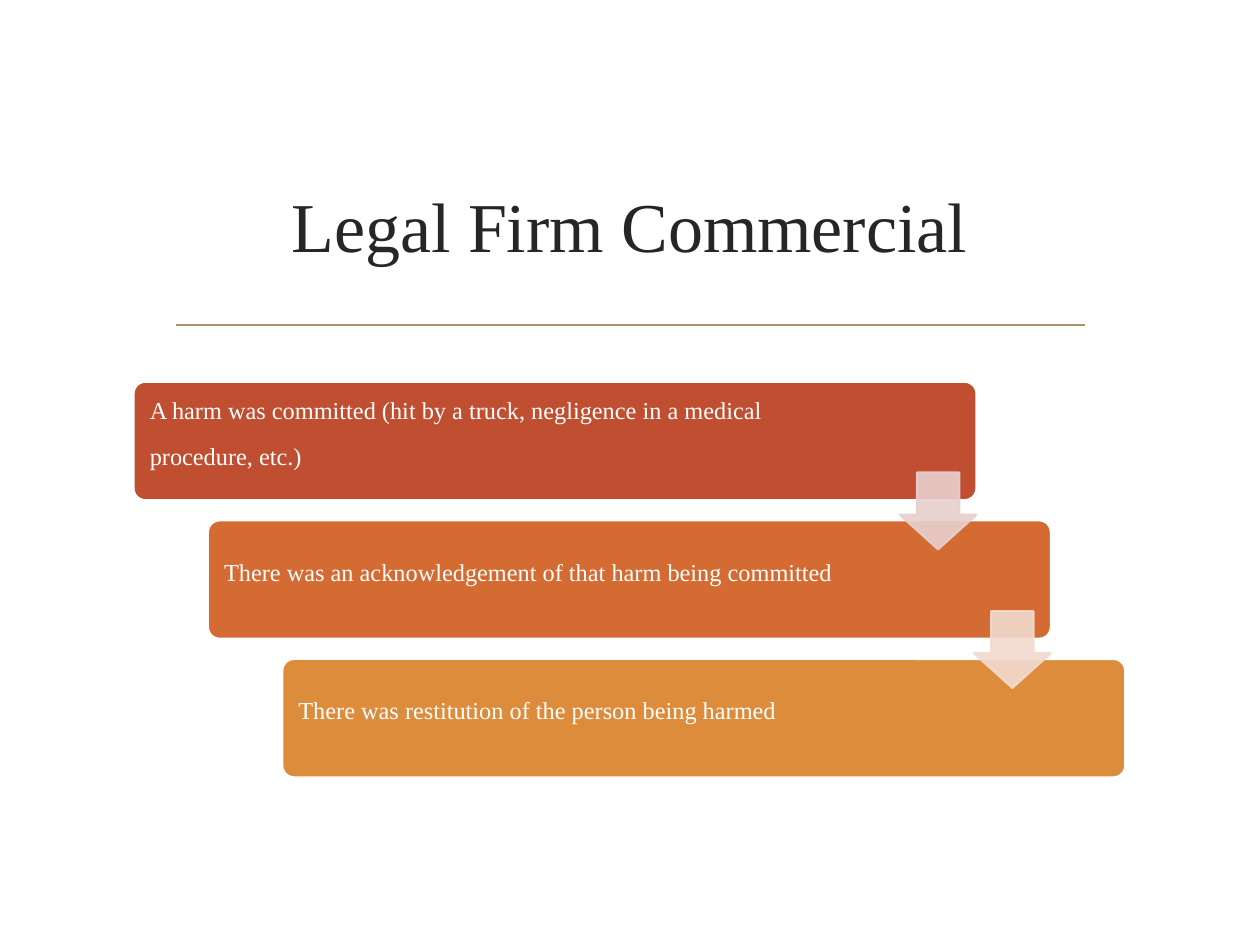
from lxml.etree import SubElement
from pptx import Presentation
from pptx.dml.color import RGBColor
from pptx.enum.shapes import MSO_CONNECTOR, MSO_SHAPE
from pptx.enum.text import MSO_ANCHOR, PP_ALIGN
from pptx.oxml.ns import qn
from pptx.util import Inches, Pt

# Content
TITLE = "Legal Firm Commercial"
STEPS = [  # wording, bar colour, text width
    ("A harm was committed (hit by a truck, negligence in a medical procedure, etc.)", "C04F32", 5.68),
    ("There was an acknowledgement of that harm being committed", "D36B33", 5.43),
    ("There was restitution of the person being harmed", "DD8C3C", 5.43),
]
ARROW_COLORS = ["E8D0CE", "F2DACE"]

# Layout in inches
SLIDE_W, SLIDE_H = 10, 7.5
LEFT, TOP = 1.06, 3.03
STEP_X, STEP_Y = 0.59, 1.1
BAR_W, BAR_H = 6.69, 0.94
TEXT_INSET = 0.03
ARROW_SIZE, ARROW_DROP = 0.61, 0.72
LINE_WIDTH = Pt(1.25)
TITLE_FORMAT = {"size": Pt(40), "name": "Times New Roman"}
STEP_FORMAT = {"size": Pt(24), "name": "Times New Roman"}


def rgb(color):
    return RGBColor.from_string(color)


def box(left, top, width, height):
    return [Inches(value) for value in (left, top, width, height)]


def add_text(slide, place, wording, color, formats, inset):
    frame = slide.shapes.add_textbox(*box(*place)).text_frame
    settings = {"word_wrap": True, "vertical_anchor": MSO_ANCHOR.MIDDLE}
    for side in ("left", "right", "top", "bottom"):
        settings[f"margin_{side}"] = Inches(inset)
    for name, value in settings.items():
        setattr(frame, name, value)
    paragraph = frame.paragraphs[0]
    run = paragraph.add_run()
    run.text = wording
    for name, value in formats.items():
        setattr(run.font, name, value)
    run.font.color.rgb = rgb(color)
    return paragraph, run


def add_block(slide, preset, place, adjustments, fill, line):
    block = slide.shapes.add_shape(preset, *box(*place))
    block.shadow.inherit = False
    for index, value in enumerate(adjustments):
        block.adjustments[index] = value
    block.fill.solid()
    block.fill.fore_color.rgb = rgb(fill)
    block.line.color.rgb = rgb(line)
    block.line.width = LINE_WIDTH
    return block


def main():
    deck = Presentation()
    deck.slide_width, deck.slide_height = Inches(SLIDE_W), Inches(SLIDE_H)
    slide = deck.slides.add_slide(deck.slide_layouts[6])

    # Divider and title
    divider = slide.shapes.add_connector(
        MSO_CONNECTOR.STRAIGHT, *box(1.4, 2.58, 8.61, 2.58))
    divider.line.color.rgb = rgb("AB946B")
    divider.line.width = LINE_WIDTH
    SubElement(divider._element.spPr, qn("a:effectLst"))
    heading, _ = add_text(slide, (LEFT, 1.07, 7.87, 1.43), TITLE, "262626", TITLE_FORMAT, 0.05)
    heading.alignment = PP_ALIGN.CENTER

    # Staircase of steps
    for row, (wording, color, text_width) in enumerate(STEPS):
        left, top = LEFT + row * STEP_X, TOP + row * STEP_Y
        add_block(slide, MSO_SHAPE.ROUNDED_RECTANGLE, (left, top, BAR_W, BAR_H),
                  [0.1], color, "FFFFFF")
        place = (left + TEXT_INSET, top + TEXT_INSET, text_width, 0.89)
        paragraph, run = add_text(slide, place, wording, "FFFFFF", STEP_FORMAT, 0.1)
        paragraph.line_spacing = 0.9
        paragraph.space_after = Pt(8.4)
        run.font._element.set("baseline", "30000")

    # Translucent arrows at the right end of each bar but the last
    for row, color in enumerate(ARROW_COLORS):
        place = (LEFT + row * STEP_X + BAR_W - ARROW_SIZE,
                 TOP + row * STEP_Y + ARROW_DROP, ARROW_SIZE, ARROW_SIZE)
        # The preset lists the shaft width after the head length
        arrow = add_block(slide, MSO_SHAPE.DOWN_ARROW, place, [0.55, 0.45], color, color)
        for tint in arrow._element.spPr.iter(qn("a:srgbClr")):
            SubElement(tint, qn("a:alpha")).set("val", "90000")

    deck.save("out.pptx")


if __name__ == "__main__":
    main()
